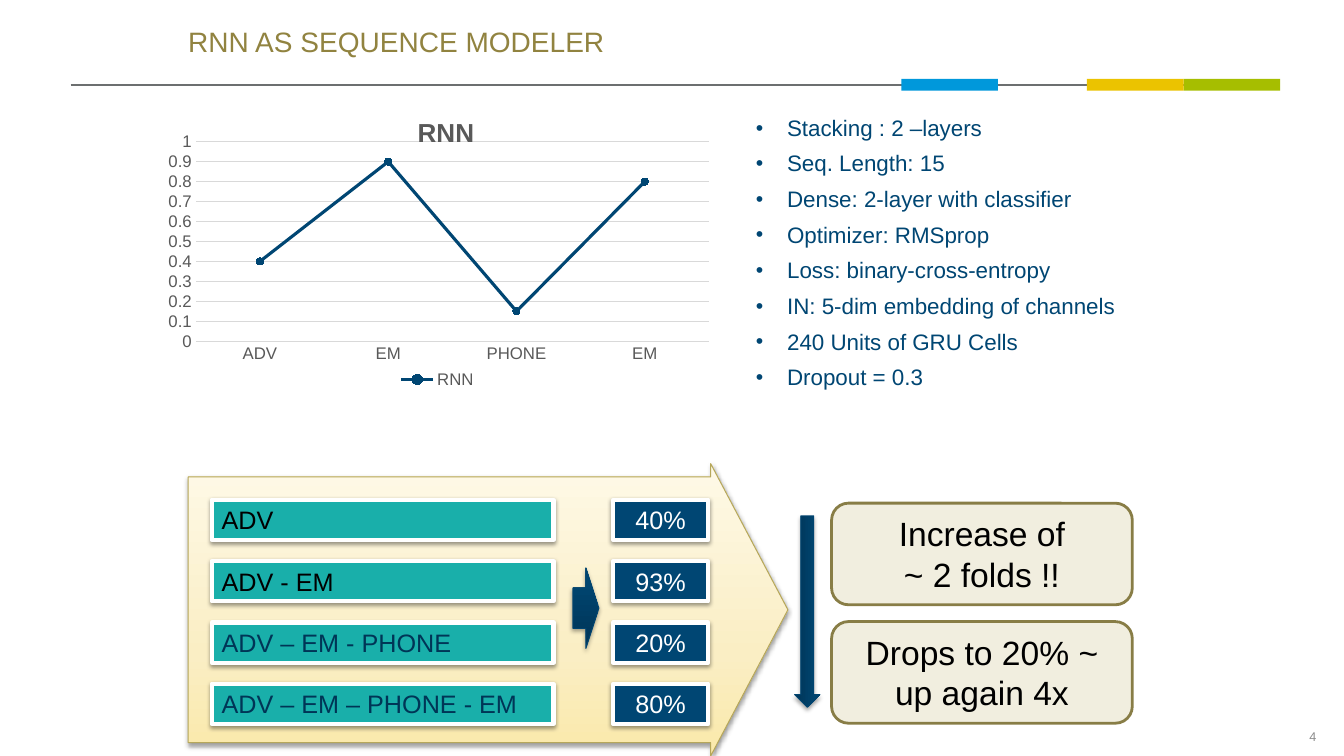
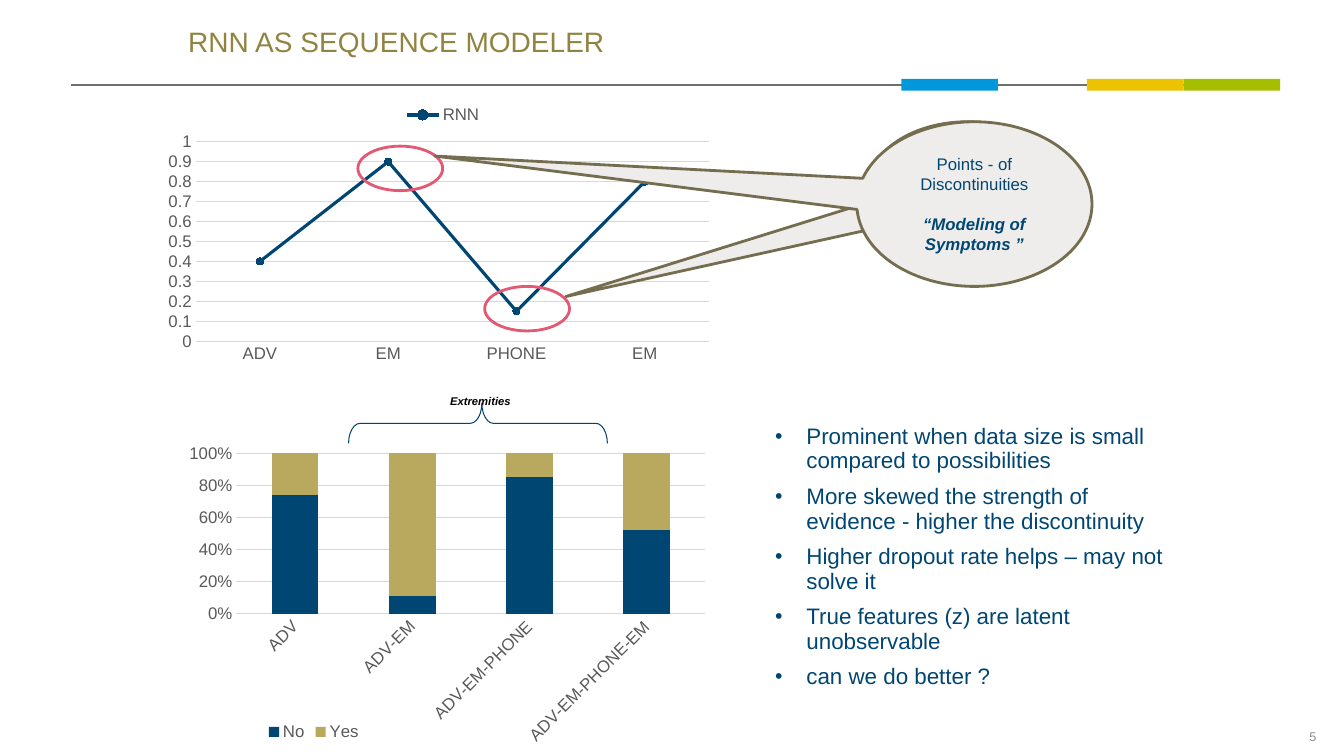
"""Build two slides on recurrent networks as sequence modelers."""
from pptx import Presentation
from pptx.chart.data import CategoryChartData
from pptx.dml.color import RGBColor
from pptx.enum.chart import XL_CHART_TYPE, XL_LEGEND_POSITION, XL_MARKER_STYLE, XL_TICK_MARK
from pptx.enum.shapes import MSO_CONNECTOR, MSO_SHAPE
from pptx.enum.text import MSO_ANCHOR, PP_ALIGN
from pptx.oxml import parse_xml
from pptx.oxml.ns import nsdecls, qn
from pptx.util import Inches, Pt

RECT, ROUND, OVAL = MSO_SHAPE.RECTANGLE, MSO_SHAPE.ROUNDED_RECTANGLE, MSO_SHAPE.OVAL
ARROW, BRACE, CALL = MSO_SHAPE.RIGHT_ARROW, MSO_SHAPE.LEFT_BRACE, MSO_SHAPE.OVAL_CALLOUT
LINE, STACK = XL_CHART_TYPE.LINE_MARKERS, XL_CHART_TYPE.COLUMN_STACKED_100
BOTTOM, DOT, NONE = XL_LEGEND_POSITION.BOTTOM, XL_MARKER_STYLE.CIRCLE, XL_TICK_MARK.NONE
TOP, MIDDLE = MSO_ANCHOR.TOP, MSO_ANCHOR.MIDDLE
LEFT, CENTER, RIGHT = PP_ALIGN.LEFT, PP_ALIGN.CENTER, PP_ALIGN.RIGHT

WIDE, HIGH = Inches(13.33), Inches(7.5)
COL, ROW = WIDE / 160, HIGH / 90
FACE = "Arial"
NAVY, INK, WHITE, BLACK = "004673", "003556", "FFFFFF", "000000"
TEAL, SAND, GRAY, PALE = "19AFAA", "B8A95E", "595959", "D9D9D9"
GOLD = ((0, "FAE9AA"), (35, "FAEEC4"), (100, "FEF9E7"))
DEEP = ((0, "003456"), (80, "00446F"), (100, "004470"))
PLAIN = {"word_wrap": True, "vertical_anchor": TOP}
TIGHT = dict.fromkeys(("margin_left", "margin_top", "margin_right", "margin_bottom"), 0)
rgb = RGBColor.from_string


def put(slide, kind, box, fill=None, line=None, thick=0.75, adj=(), turn=0, shade=0):
    """Place a shape, or a text box when no kind is given, on the grid."""
    x, y, w, h = box
    area = int(x * COL), int(y * ROW), int(w * COL), int(h * ROW)
    if kind is None:
        return slide.shapes.add_textbox(*area)
    shape = slide.shapes.add_shape(kind, *area)
    shape.rotation = turn
    for i, value in enumerate(adj):
        shape.adjustments[i] = value
    if fill is None:
        shape.fill.background()
    elif isinstance(fill, str):
        shape.fill.solid()
        shape.fill.fore_color.rgb = rgb(fill)
    else:
        shape.fill.gradient()
        shape.fill.gradient_angle = 90
        stops = "".join(f'<a:gs pos="{at * 1000}"><a:srgbClr val="{hue}"/></a:gs>' for at, hue in fill)
        old = shape.element.spPr.find(".//" + qn("a:gsLst"))
        old.getparent().replace(old, parse_xml(f'<a:gsLst {nsdecls("a")}>{stops}</a:gsLst>'))
    if line:
        shape.line.color.rgb = rgb(line)
        shape.line.width = Pt(thick)
    else:
        shape.line.fill.background()
    shape.shadow.inherit = False
    if shade:
        shape.element.spPr.find(qn("a:effectLst")).append(parse_xml(
            f'<a:outerShdw {nsdecls("a")} blurRad="{Pt(3.1)}" dist="{Pt(1.6)}" dir="5400000" rotWithShape="0">'
            f'<a:srgbClr val="{BLACK}"><a:alpha val="{shade * 1000}"/></a:srgbClr></a:outerShdw>'))
    return shape


def write(shape, lines, size, hue, align=LEFT, frame=PLAIN, para=None):
    """Fill a shape with paragraphs in one format and return them."""
    body = shape.text_frame
    body.text = "\n".join(lines)
    for key, value in frame.items():
        setattr(body, key, value)
    for item in body.paragraphs:
        for key, value in {"alignment": align, **(para or {})}.items():
            setattr(item, key, value)
        for run in item.runs:
            run.font.name, run.font.size = FACE, Pt(size)
            run.font.color.rgb = rgb(hue)
    return body.paragraphs


deck = Presentation()
deck.slide_width, deck.slide_height = WIDE, HIGH
first, second = slides = [deck.slides.add_slide(deck.slide_layouts[6]) for _ in range(2)]

for page, slide in enumerate(slides, 4):
    write(put(slide, None, (121.9, 85.9, 36, 3.6)), [str(page)], 9, "8C8C8C", RIGHT,
          {**PLAIN, "vertical_anchor": MIDDLE})
    rule = slide.shapes.add_connector(
        MSO_CONNECTOR.STRAIGHT, int(8.4 * COL), int(10.1 * ROW), int(152 * COL), int(10.1 * ROW))
    rule.line.color.rgb = rgb("6C6F70")
    rule.line.width = Pt(1)
    rule.element.spPr.append(parse_xml(f'<a:effectLst {nsdecls("a")}/>'))
    for x, hue in ((140.9, "A6BE00"), (129.4, "EBC300"), (107.3, "0098DB")):
        put(slide, RECT, (x, 9.4, 11.5, 1.4), hue)
    write(put(slide, None, (22.4, 3.1, 102, 4)), ["RNN AS SEQUENCE MODELER"], 20, "918340",
          frame={**PLAIN, **TIGHT}, para={"line_spacing": 0.97})

steps = ("ADV", "EM", "PHONE", "EM")
paths = ["-".join(steps[:n]) for n in range(1, 5)]
trend = (("RNN", (0.4, 0.9, 0.15, 0.8), NAVY),)
share = (("No", (74, 11, 85, 52), NAVY), ("Yes", (26, 89, 15, 48), SAND))
top, low = (20, 11.8, 66.2, 35), (19.3, 51.5, 67, 38.3)
flat, tall = (0.05, 0.145, 0.923, 0.679), (0.132, 0.065, 0.833, 0.498)
for slide, kind, box, cats, rows, title, plan, spot in (
    (first, LINE, top, steps, trend, "RNN", flat, (0.41, 0.91)),
    (second, LINE, top, steps, trend, "", flat, (0.42, 0.01)),
    (second, STACK, low, paths, share, "", tall, (0.18, 0.89)),
):
    data = CategoryChartData()
    data.categories = cats
    for name, values, _ in rows:
        data.add_series(name, values)
    x, y, w, h = box
    chart = slide.shapes.add_chart(kind, int(x * COL), int(y * ROW), int(w * COL), int(h * ROW), data).chart
    chart.font.name, chart.font.size = FACE, Pt(10)
    chart.has_title = bool(title)
    if title:
        write(chart.chart_title, [title], 18.6, GRAY, CENTER, {})
    chart.has_legend = True
    chart.legend.position = BOTTOM
    chart.legend.include_in_layout = False
    cat, val = chart.category_axis, chart.value_axis
    for font in (cat.tick_labels.font, val.tick_labels.font, chart.legend.font):
        font.name, font.size = FACE, Pt(12)
        font.color.rgb = rgb(GRAY)
    for axis in (cat, val):
        axis.major_tick_mark = axis.minor_tick_mark = NONE
    val.has_major_gridlines = True
    for pen in (cat.format.line, val.major_gridlines.format.line):
        pen.color.rgb = rgb(PALE)
        pen.width = Pt(0.75)
    val.format.line.fill.background()
    plot = chart.plots[0]
    plot.vary_by_categories = False
    if kind == LINE:
        scale = {"minimum_scale": 0, "maximum_scale": 1, "major_unit": 0.1}
        for key, value in scale.items():
            setattr(val, key, value)
    else:
        plot.gap_width, plot.overlap = 150, 100
        val.tick_labels.number_format = "0%"
        val.tick_labels.number_format_is_linked = False
        chart.element.find(f".//{qn('c:catAx')}/{qn('c:txPr')}/{qn('a:bodyPr')}").set("rot", "-2700000")
    for series, (_, _, hue) in zip(plot.series, rows):
        fills = [series.format.fill]
        if kind == LINE:
            series.smooth = False
            series.format.line.color.rgb = rgb(hue)
            series.format.line.width = Pt(2.25)
            series.marker.style, series.marker.size = DOT, 5
            series.marker.format.line.color.rgb = rgb(hue)
            fills = [series.marker.format.fill]
        for fill in fills:
            fill.solid()
            fill.fore_color.rgb = rgb(hue)
    for tag, place, nums in (("c:plotArea", 0, plan), ("c:legend", 1, spot)):
        host = chart.element.find(".//" + qn(tag))
        for old in host.findall(qn("c:layout")):
            host.remove(old)
        inner = '<c:layoutTarget val="inner"/>' if place == 0 else ""
        modes = "".join(f'<c:{axis}Mode val="edge"/>' for axis in "xy")
        marks = "".join(f'<c:{axis} val="{num}"/>' for axis, num in zip("xywh", nums))
        host.insert(place, parse_xml(
            f'<c:layout {nsdecls("c")}><c:manualLayout>{inner}{modes}{marks}</c:manualLayout></c:layout>'))

facts = (
    "Stacking : 2 –layers", "Seq. Length: 15", "Dense: 2-layer with classifier", "Optimizer: RMSprop",
    "Loss: binary-cross-entropy", "IN: 5-dim embedding of channels", "240 Units of GRU Cells", "Dropout = 0.3",
)
notes = (
    "Prominent when data size is small compared to possibilities",
    "More skewed the strength of evidence - higher the discontinuity",
    "Higher dropout rate helps – may not solve it",
    "True features (z) are latent unobservable",
    "can we do better ?",
)
space = {"line_spacing": 0.91, "space_before": Pt(7.1), "space_after": Pt(0.9)}
for slide, x, y, lines in ((first, 88.8, 13.3, facts), (second, 91.1, 50, notes)):
    for item in write(put(slide, None, (x, y, 48.8, 34.8)), lines, 16, NAVY, para=space):
        props = item._p.get_or_add_pPr()
        props.set("marL", str(Inches(0.31)))
        props.set("indent", str(-Inches(0.31)))
        for mark in ('buSzPct {} val="95000"', 'buFont {} typeface="Arial"', 'buChar {} char="•"'):
            props.append(parse_xml(f'<a:{mark.format(nsdecls("a"))}/>'))

put(first, ARROW, (22.4, 55.2, 71.4, 34.8), GOLD, "B6A75A", adj=(0.909, 0.264), shade=38)
for i, (label, rate, hue) in enumerate((
    ("ADV", "40%", BLACK), ("ADV - EM", "93%", BLACK),
    ("ADV – EM - PHONE", "20%", INK), ("ADV – EM – PHONE - EM", "80%", INK),
)):
    y = 59.5 + 7.3 * i
    for x, w, fill, word, tint, align in (
        (25.2, 40.7, TEAL, label, hue, LEFT), (73, 11.3, NAVY, rate, WHITE, CENTER),
    ):
        write(put(first, RECT, (x, y, w, 4.8), fill, WHITE, 3, shade=38), [word], 18, tint, align)
for box, turn in (((68.2, 67.6, 3.1, 9.6), 0), ((84.7, 71.3, 22.8, 3), 90)):
    put(first, ARROW, box, DEEP, "004470", turn=turn, shade=35)
for y, lines in ((59.9, ("Increase of", "~ 2 folds !!")), (74, ("Drops to 20% ~ up again 4x",))):
    write(put(first, ROUND, (99, y, 35.8, 12.1), "F1EEDF", "887D46", 2), lines, 24, BLACK, CENTER)

olive = {"fill": "EEEDEB", "line": "746D4F", "thick": 2}
put(second, CALL, (103.2, 14.5, 23.9, 16.3), adj=(-2, 0.777), **olive)
for x, y in ((42.6, 17.4), (57.7, 34.1)):
    put(second, OVAL, (x, y, 10.1, 5.3), line="E35873", thick=2)
claim = put(second, CALL, (102, 14.5, 28, 19.6), adj=(-2.295, -0.292), **olive)
quote = write(claim, ("Points - of Discontinuities", "“Modeling of Symptoms ”"), 12, NAVY, CENTER,
              {**PLAIN, "vertical_anchor": MIDDLE})[1]
quote.space_before = Pt(14)
put(second, BRACE, (54.5, 35, 4.8, 30.8), line="004470", adj=(0.286, 0.485), turn=90)
peak = write(put(second, None, (52.4, 46.3, 9.7, 2.9)), ["Extremities"], 8, BLACK,
             frame={**PLAIN, "word_wrap": False})[0]
for item in (quote, peak):
    for key in ("bold", "italic"):
        setattr(item.runs[0].font, key, True)

deck.save("out.pptx")
